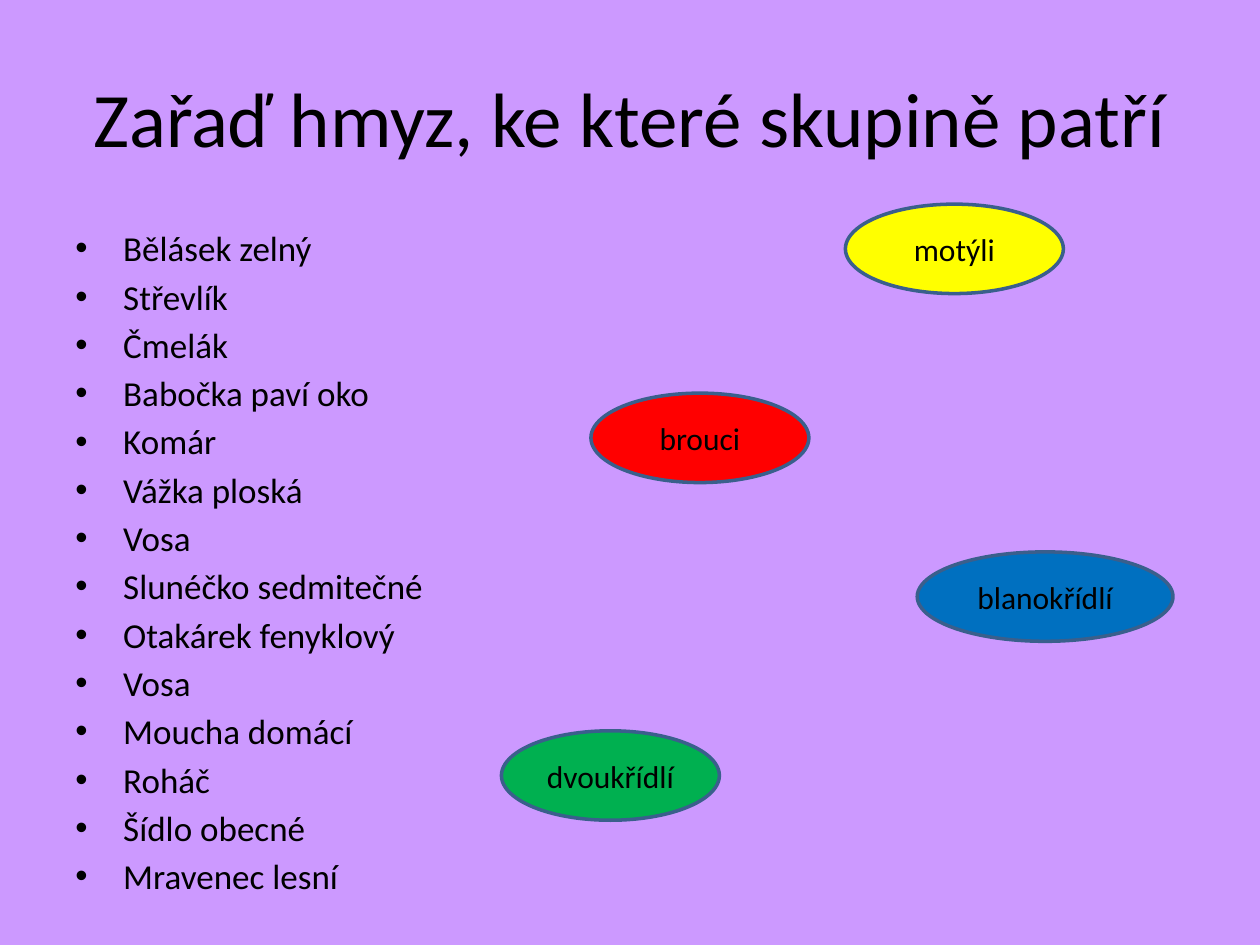
from dataclasses import dataclass

from lxml import etree
from pptx import Presentation
from pptx.dml.color import RGBColor
from pptx.enum.shapes import MSO_SHAPE
from pptx.enum.text import MSO_ANCHOR, PP_ALIGN
from pptx.oxml.ns import qn
from pptx.util import Inches, Pt

OVAL = MSO_SHAPE.OVAL
MIDDLE = MSO_ANCHOR.MIDDLE
TOP = MSO_ANCHOR.TOP
CENTER = PP_ALIGN.CENTER
LEFT = PP_ALIGN.LEFT


@dataclass(frozen=True)
class Theme:
    font: str = "Calibri"
    background: str = "CC99FF"
    text: str = "000000"
    outline: str = "3A5F8C"
    outline_width: float = 2
    title_size: int = 44
    list_size: int = 20
    group_size: int = 18
    list_gap: float = 3.6
    bullet_indent: float = 0.38


@dataclass(frozen=True)
class Group:
    name: str
    left: float
    top: float
    fill: str
    width: float = 1.73
    height: float = 0.71


THEME = Theme()

TITLE = "Zařaď hmyz, ke které skupině patří"

INSECTS = [
    "Bělásek zelný",
    "Střevlík",
    "Čmelák",
    "Babočka paví oko",
    "Komár",
    "Vážka ploská",
    "Vosa",
    "Slunéčko sedmitečné",
    "Otakárek fenyklový",
    "Vosa",
    "Moucha domácí",
    "Roháč",
    "Šídlo obecné",
    "Mravenec lesní",
]

GROUPS = [
    Group("motýli", 6.71, 1.62, "FFFF00"),
    Group("brouci", 4.69, 3.12, "FF0000"),
    Group("blanokřídlí", 7.28, 4.38, "0070C0", width=2.03),
    Group("dvoukřídlí", 3.98, 5.8, "00B050"),
]


def color(value: str) -> RGBColor:
    return RGBColor.from_string(value)


def add_span(para, text: str, size: int) -> None:
    span = para.add_run()
    span.text = text
    span.font.name = THEME.font
    span.font.size = Pt(size)
    span.font.color.rgb = color(THEME.text)


def add_bullet(para) -> None:
    properties = para._p.get_or_add_pPr()
    indent = Inches(THEME.bullet_indent)
    properties.set("marL", str(indent))
    properties.set("indent", str(-indent))
    etree.SubElement(properties, qn("a:buFont"), typeface="Arial")
    etree.SubElement(properties, qn("a:buChar"), char="•")


def add_text_box(slide, top: float, height: float, anchor):
    """Add a wrapping text box across the content width; return its frame."""
    box = slide.shapes.add_textbox(
        Inches(0.5), Inches(top), Inches(9), Inches(height))
    frame = box.text_frame
    frame.word_wrap = True
    frame.vertical_anchor = anchor
    return frame


def add_title(slide, text: str) -> None:
    para = add_text_box(slide, 0.3, 1.25, MIDDLE).paragraphs[0]
    para.alignment = CENTER
    add_span(para, text, THEME.title_size)


def add_insect_list(slide, insects: list[str]) -> None:
    frame = add_text_box(slide, 1.75, 4.95, TOP)
    for index, insect in enumerate(insects):
        para = frame.add_paragraph() if index else frame.paragraphs[0]
        add_bullet(para)
        para.alignment = LEFT
        if index:
            para.space_before = Pt(THEME.list_gap)
        add_span(para, insect, THEME.list_size)


def add_group(slide, group: Group) -> None:
    oval = slide.shapes.add_shape(
        OVAL, Inches(group.left), Inches(group.top),
        Inches(group.width), Inches(group.height))
    oval.shadow.inherit = False
    oval.fill.solid()
    oval.fill.fore_color.rgb = color(group.fill)
    oval.line.color.rgb = color(THEME.outline)
    oval.line.width = Pt(THEME.outline_width)
    frame = oval.text_frame
    frame.word_wrap = True
    frame.vertical_anchor = MIDDLE
    para = frame.paragraphs[0]
    para.alignment = CENTER
    add_span(para, group.name, THEME.group_size)


def main() -> None:
    deck = Presentation()
    deck.slide_width = Inches(10)
    deck.slide_height = Inches(7.5)
    slide = deck.slides.add_slide(deck.slide_layouts[6])
    slide.background.fill.solid()
    slide.background.fill.fore_color.rgb = color(THEME.background)
    add_title(slide, TITLE)
    add_insect_list(slide, INSECTS)
    for group in GROUPS:
        add_group(slide, group)
    deck.save("out.pptx")


if __name__ == "__main__":
    main()
